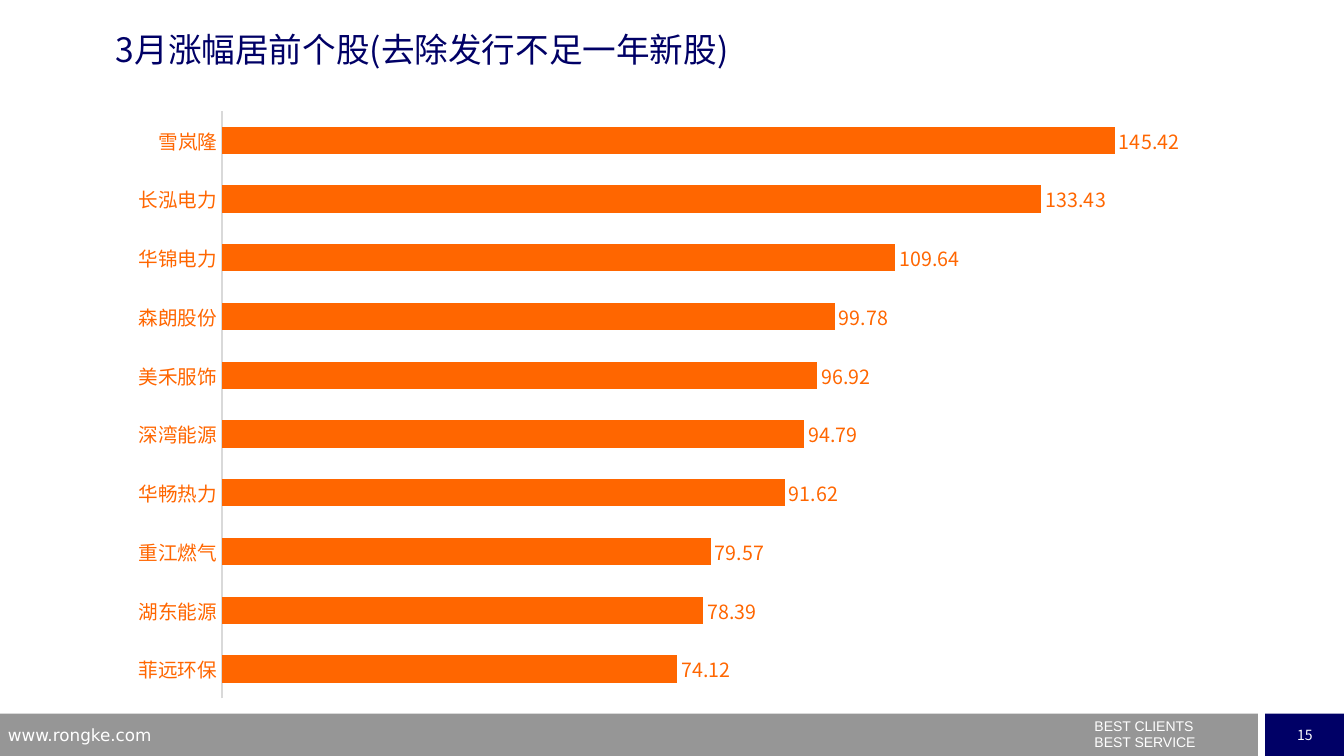
"""Build a slide ranking the stocks with the largest gains in March."""
from lxml import etree
from pptx import Presentation
from pptx import util as u
from pptx.chart import data as chart_data
from pptx.dml.color import RGBColor
from pptx.enum import chart as ch, shapes, text
from pptx.oxml.ns import qn

NAVY = RGBColor(0x00, 0x00, 0x66)
ORANGE = RGBColor(0xFF, 0x66, 0x00)
GREY = RGBColor(0x96, 0x96, 0x96)
AXIS_GREY = RGBColor(0xD9, 0xD9, 0xD9)
WHITE = RGBColor(0xFF, 0xFF, 0xFF)
CJK = "Noto Sans CJK SC"
FOOTER_TOP, FOOTER_HEIGHT = 7.08, 0.42

GAINS = [
    ("菲远环保", 74.12),
    ("湖东能源", 78.39),
    ("重江燃气", 79.57),
    ("华畅热力", 91.62),
    ("深湾能源", 94.79),
    ("美禾服饰", 96.92),
    ("森朗股份", 99.78),
    ("华锦电力", 109.64),
    ("长泓电力", 133.43),
    ("雪岚隆", 145.42),
]


def set_font(font, size, color, name=CJK):
    font.size = u.Pt(size)
    font.name = name
    font.color.rgb = color
    font.bold = False


def match_east_asian(element):
    for latin in list(element.iter(qn("a:latin"))):
        east_asian = etree.Element(qn("a:ea"), typeface=latin.get("typeface"))
        latin.addnext(east_asian)


def write_text(shape, lines, size, color, name=CJK, align=text.PP_ALIGN.LEFT,
               anchor=text.MSO_ANCHOR.TOP, wrap=True, inset=None,
               spacing=None, gap=0):
    frame = shape.text_frame
    frame.word_wrap = wrap
    frame.auto_size = text.MSO_AUTO_SIZE.NONE
    frame.vertical_anchor = anchor
    if inset is not None:
        frame.margin_left = frame.margin_right = u.Inches(inset)
        frame.margin_top = frame.margin_bottom = u.Inches(inset)
    for index, line in enumerate(lines):
        para = frame.paragraphs[0] if index == 0 else frame.add_paragraph()
        para.alignment = align
        para.line_spacing = spacing
        para.space_before = u.Pt(gap if index else 0)
        span = para.add_run()
        span.text = line
        set_font(span.font, size, color, name)
    match_east_asian(frame._txBody)


def add_band(page, left, width, color):
    band = page.shapes.add_shape(
        shapes.MSO_SHAPE.RECTANGLE, u.Inches(left), u.Inches(FOOTER_TOP),
        u.Inches(width), u.Inches(FOOTER_HEIGHT))
    band.shadow.inherit = False
    band.fill.solid()
    band.fill.fore_color.rgb = color
    band.line.fill.background()
    return band


def add_label(page, left, top, width, height, lines, **style):
    box = page.shapes.add_textbox(u.Inches(left), u.Inches(top),
                                  u.Inches(width), u.Inches(height))
    write_text(box, lines, color=WHITE, **style)


def add_footer(page):
    add_band(page, 0, 12.48, GREY)
    number = add_band(page, 12.55, 0.79, NAVY)
    write_text(number, ["15"], 10, WHITE, align=text.PP_ALIGN.CENTER,
               anchor=text.MSO_ANCHOR.MIDDLE, wrap=False)
    add_label(page, 10.76, 7.14, 2.56, 0.36, ["BEST CLIENTS", "BEST SERVICE"],
              size=10, name="Arial", spacing=0.5, gap=5.7)
    add_label(page, -0.02, 7.14, 3.22, 0.26, ["www.rongke.com"],
              size=12, name="DejaVu Sans")


def set_title(page, words):
    title = page.shapes.title
    title.left, title.top = u.Inches(1.15), u.Inches(0.28)
    title.width, title.height = u.Inches(9), u.Inches(0.41)
    write_text(title, [words], 24, NAVY, inset=0,
               anchor=text.MSO_ANCHOR.MIDDLE)


def add_gains_chart(page):
    gains = chart_data.CategoryChartData(number_format="0.00")
    gains.categories = [stock for stock, _ in GAINS]
    gains.add_series("Series 1", [gain for _, gain in GAINS])
    chart = page.shapes.add_chart(
        ch.XL_CHART_TYPE.BAR_CLUSTERED, u.Inches(1.15), u.Inches(0.98),
        u.Inches(11.02), u.Inches(6.07), gains).chart
    chart.has_legend = False
    chart.has_title = False
    set_font(chart.font, 14, ORANGE)

    stocks = chart.category_axis
    stocks.major_tick_mark = ch.XL_TICK_MARK.NONE
    stocks.format.line.color.rgb = AXIS_GREY
    stocks.format.line.width = u.Pt(1)
    set_font(stocks.tick_labels.font, 14, ORANGE)

    scale = chart.value_axis
    scale.visible = False
    scale.has_major_gridlines = False
    scale.minimum_scale, scale.maximum_scale = 0, 160

    plot = chart.plots[0]
    plot.vary_by_categories = False
    plot.gap_width, plot.overlap = 115, -20
    bars = plot.series[0].format
    bars.fill.solid()
    bars.fill.fore_color.rgb = ORANGE
    labels = plot.series[0].data_labels
    labels.show_value = True
    labels.number_format = "0.00"
    labels.number_format_is_linked = False
    labels.position = ch.XL_LABEL_POSITION.OUTSIDE_END
    set_font(labels.font, 14, ORANGE)
    match_east_asian(chart._chartSpace)


def main():
    deck = Presentation()
    deck.slide_width, deck.slide_height = u.Inches(13.333), u.Inches(7.5)
    page = deck.slides.add_slide(deck.slide_layouts[5])
    add_footer(page)
    set_title(page, "3月涨幅居前个股(去除发行不足一年新股)")
    add_gains_chart(page)
    deck.save("out.pptx")


if __name__ == "__main__":
    main()
